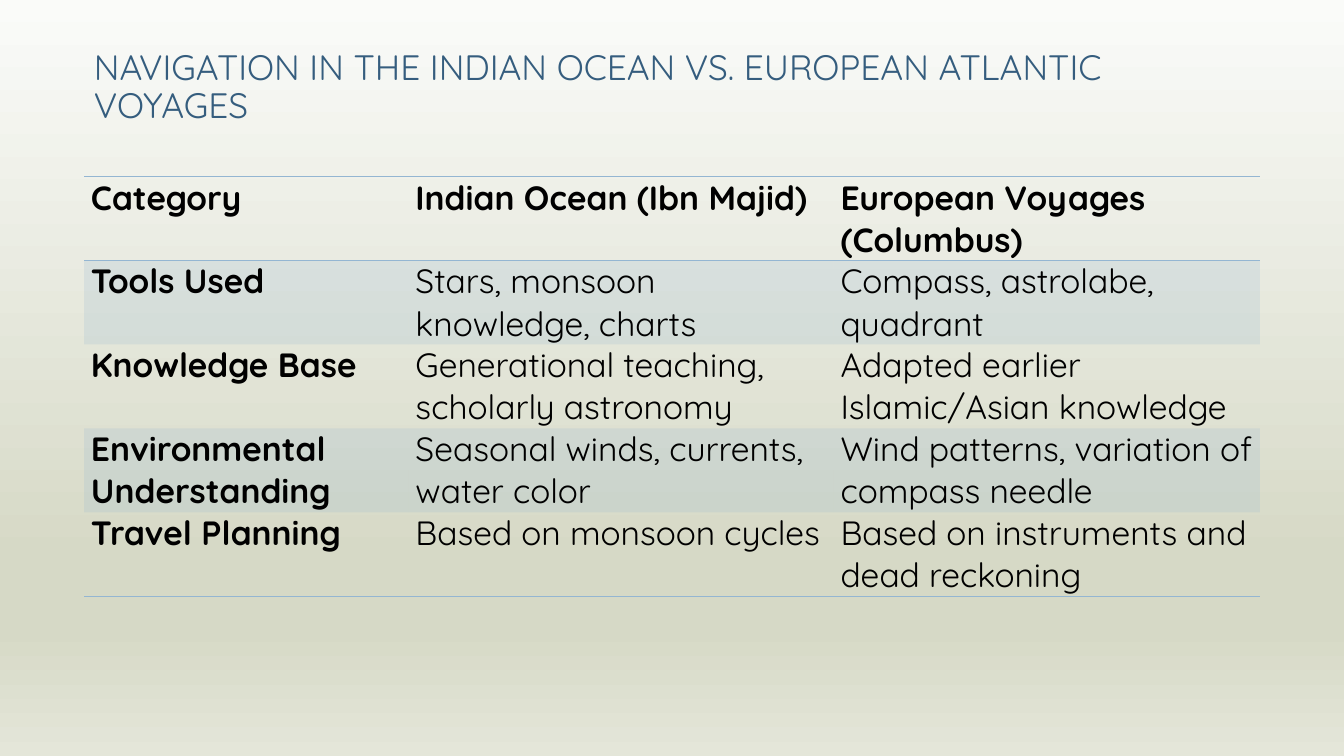
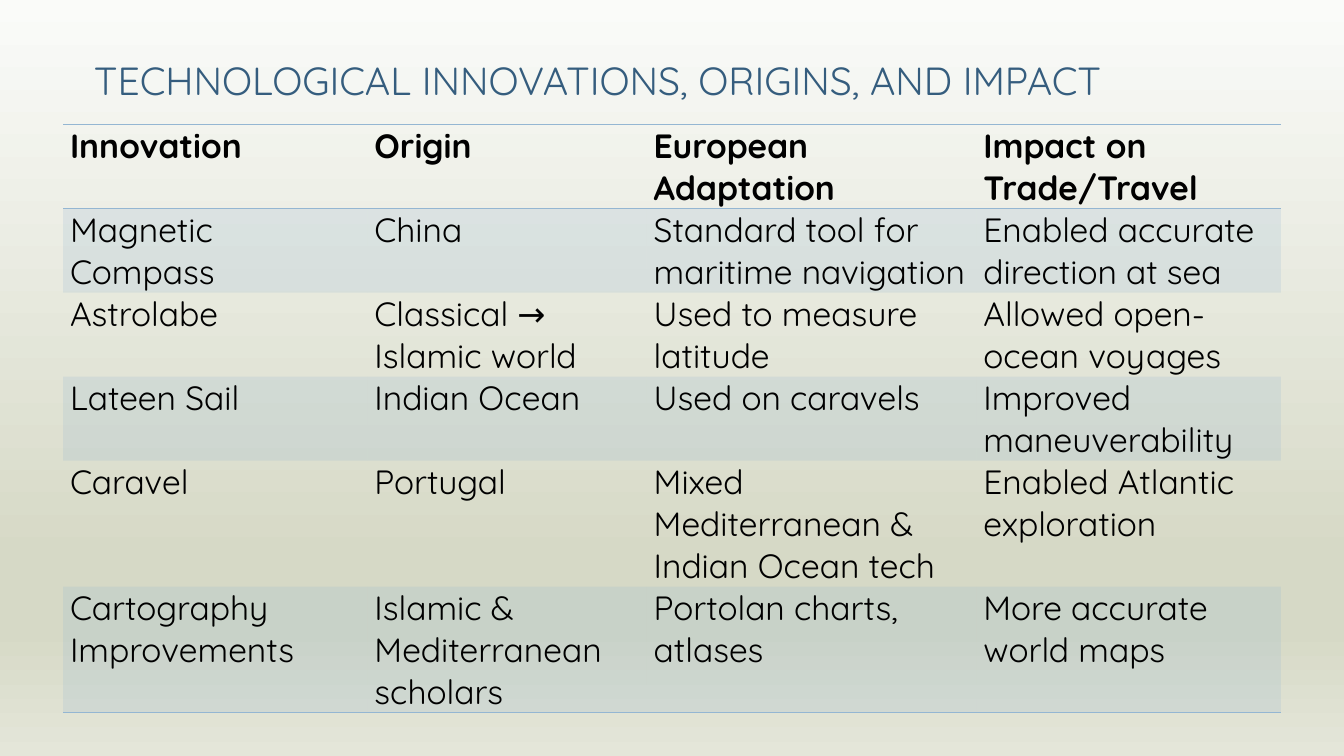
from lxml import etree
from pptx import Presentation
from pptx.dml.color import RGBColor
from pptx.enum import text
from pptx.oxml import ns
from pptx.util import Pt

COLORS = {
    "title": "355D7E",
    "ink": "000000",
    "accent": "94B6D2",
    "page_top": "FAFBF9",
    "page_deep": "D6D9C6",
    "page_bottom": "E4E6D9",
}
PAGE_STOPS = [(0, "page_top"), (74, "page_deep"), (83, "page_deep"), (100, "page_bottom")]
FONT = "Quicksand"
LINE_HEIGHT = 30
BAND_OPACITY = 20
PLAIN_TABLE = "{2D5ABB26-0587-4C30-8999-92F81FD0307C}"

VOYAGES = [
    ["Category", "Indian Ocean (Ibn Majid)", "European Voyages (Columbus)"],
    ["Tools Used", "Stars, monsoon knowledge, charts", "Compass, astrolabe, quadrant"],
    ["Knowledge Base", "Generational teaching, scholarly astronomy",
     "Adapted earlier Islamic/Asian knowledge"],
    ["Environmental Understanding", "Seasonal winds, currents, water color",
     "Wind patterns, variation of compass needle"],
    ["Travel Planning", "Based on monsoon cycles", "Based on instruments and dead reckoning"],
]
INNOVATIONS = [
    ["Innovation", "Origin", "European Adaptation", "Impact on Trade/Travel"],
    ["Magnetic Compass", "China", "Standard tool for maritime navigation",
     "Enabled accurate direction at sea"],
    ["Astrolabe", "Classical → Islamic world", "Used to measure latitude",
     "Allowed open-ocean voyages"],
    ["Lateen Sail", "Indian Ocean", "Used on caravels", "Improved maneuverability"],
    ["Caravel", "Portugal", "Mixed Mediterranean & Indian Ocean tech",
     "Enabled Atlantic exploration"],
    ["Cartography Improvements", "Islamic & Mediterranean scholars",
     "Portolan charts, atlases", "More accurate world maps"],
]


def color(name):
    return RGBColor.from_string(COLORS[name])


def add_child(parent, tag, **attributes):
    return etree.SubElement(parent, ns.qn(tag), attributes)


def style_font(para, size, name, bold=False):
    para.font.name = FONT
    para.font.size = Pt(size)
    para.font.bold = bold
    para.font.color.rgb = color(name)


def paint_background(master):
    """Vertical gradient shared by every slide."""
    fill = master.background.fill
    fill.gradient()
    gradient = next(master.element.iter(ns.qn("a:gradFill")))
    for child in list(gradient):
        gradient.remove(child)
    stops = add_child(gradient, "a:gsLst")
    for position, name in PAGE_STOPS:
        stop = add_child(stops, "a:gs", pos=str(position * 1000))
        add_child(stop, "a:srgbClr", val=COLORS[name])
    add_child(gradient, "a:lin", ang="5400000", scaled="0")


def add_title(page, left, top, width, height, words, size):
    box = page.shapes.add_textbox(Pt(left), Pt(top), Pt(width), Pt(height))
    frame = box.text_frame
    frame.word_wrap = True
    frame.vertical_anchor = text.MSO_ANCHOR.BOTTOM
    para = frame.paragraphs[0]
    para.text = words
    para.line_spacing = 0.9
    style_font(para, size, "title")


def add_rule(cell, side):
    """Thin accent line on one side of a cell; must precede the cell fill."""
    line = add_child(cell._tc.get_or_add_tcPr(), side, w=str(Pt(1)))
    add_child(add_child(line, "a:solidFill"), "a:srgbClr", val=COLORS["accent"])


def fill_band(cell):
    cell.fill.solid()
    cell.fill.fore_color.rgb = color("accent")
    tint = cell._tc.tcPr.find(ns.qn("a:solidFill")).find(ns.qn("a:srgbClr"))
    add_child(tint, "a:alpha", val=str(BAND_OPACITY * 1000))


def add_banded_table(page, left, top, widths, line_counts, rows, bold_labels):
    heights = [LINE_HEIGHT * count for count in line_counts]
    frame = page.shapes.add_table(len(rows), len(widths), Pt(left), Pt(top),
                                  Pt(sum(widths)), Pt(sum(heights)))
    table = frame.table
    table.first_row = table.horz_banding = False
    next(frame._element.iter(ns.qn("a:tableStyleId"))).text = PLAIN_TABLE
    for column, width in zip(table.columns, widths):
        column.width = Pt(width)
    for row, height in zip(table.rows, heights):
        row.height = Pt(height)

    for r, entries in enumerate(rows):
        for c, entry in enumerate(entries):
            cell = table.cell(r, c)
            cell.margin_left = cell.margin_right = Pt(5)
            cell.margin_top = cell.margin_bottom = 0
            # Rules around the header and below the last row
            if r == 0:
                add_rule(cell, "a:lnT")
            if r in (0, len(rows) - 1):
                add_rule(cell, "a:lnB")
            # Every other body row is tinted
            if r % 2:
                fill_band(cell)
            else:
                cell.fill.background()
            para = cell.text_frame.paragraphs[0]
            para.text = entry
            style_font(para, 24, "ink", bold=r == 0 or (bold_labels and c == 0))


def add_voyages(page):
    add_title(page, 60, 30, 840, 63.5,
              "NAVIGATION IN THE INDIAN OCEAN VS. EUROPEAN ATLANTIC VOYAGES", 25.2)
    add_banded_table(page, 60, 126, [231.8, 303.6, 304.6], [2] * 5, VOYAGES, True)


def add_innovations(page):
    add_title(page, 60, 30, 840, 48, "TECHNOLOGICAL INNOVATIONS, ORIGINS, AND IMPACT", 28)
    add_banded_table(page, 45, 89, [217.5, 199.5, 235.5, 217.5], [2, 2, 2, 2, 3, 3],
                     INNOVATIONS, False)


def main():
    deck = Presentation()
    deck.slide_width, deck.slide_height = Pt(960), Pt(540)
    paint_background(deck.slide_master)
    for build in (add_voyages, add_innovations):
        build(deck.slides.add_slide(deck.slide_layouts[6]))
    deck.save("out.pptx")


if __name__ == "__main__":
    main()
